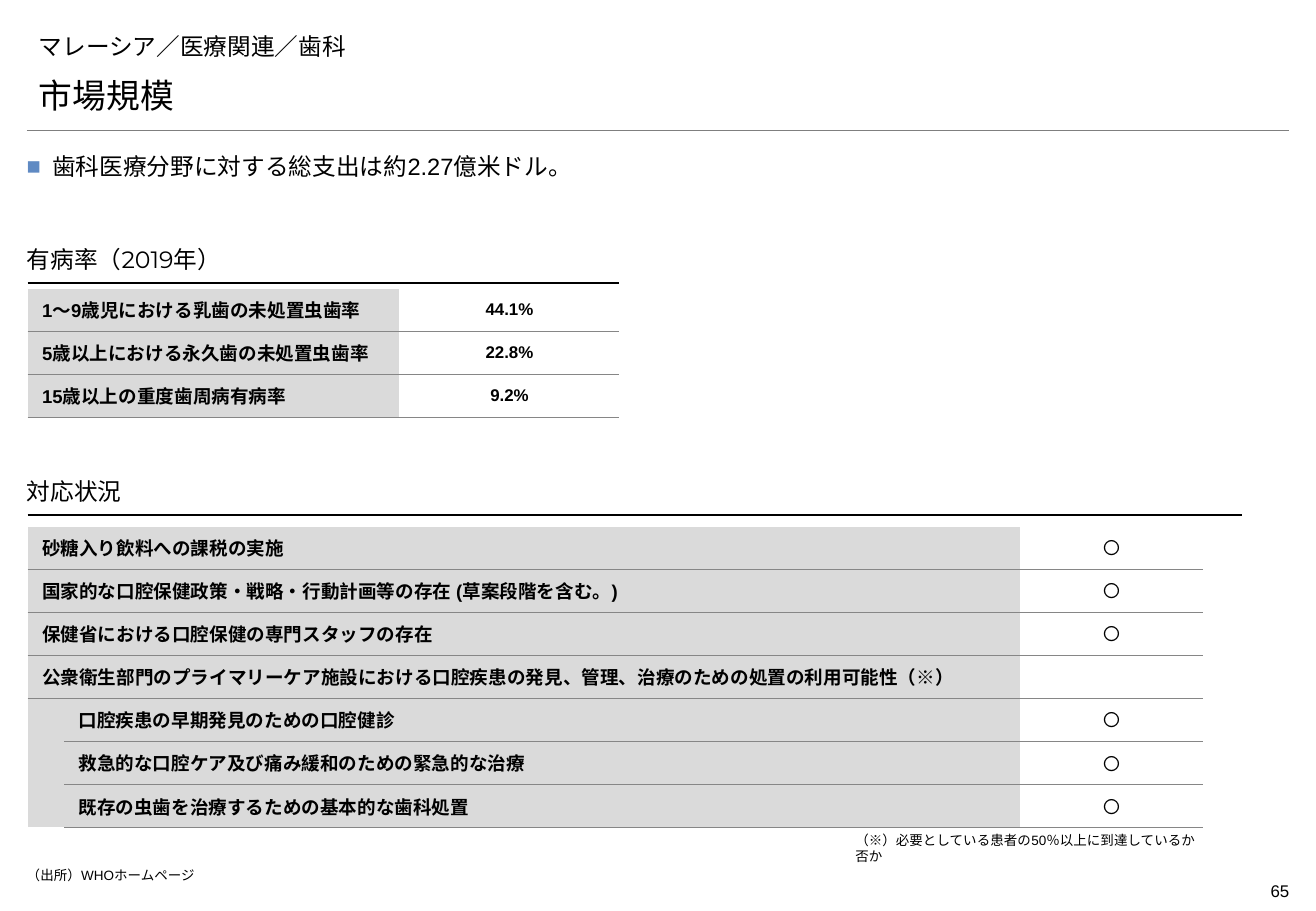
from dataclasses import dataclass
from lxml.etree import SubElement
from pptx import Presentation
from pptx.dml.color import RGBColor as Rgb
from pptx.enum.shapes import MSO_CONNECTOR as Link
from pptx.enum.text import MSO_ANCHOR as Anchor, MSO_AUTO_SIZE as Fit, PP_ALIGN as Align
from pptx.oxml.ns import qn
from pptx.util import Cm, Pt


@dataclass(frozen=True)
class Theme:
    """Hold the colours, fonts and type sizes."""
    ink: str = "000000"
    paper: str = "FFFFFF"
    label: str = "DADADA"
    rule: str = "868686"
    divide: str = "7F7F7F"
    mark: str = "5F8AC3"
    font: str = "Arial"
    head: str = "Montserrat"
    asian: str = "Noto Sans CJK JP"
    big: int = 20
    lead: int = 14
    row: int = 11
    value: int = 10
    note: int = 8
    plain: str = "{2D5ABB26-0587-4C30-8999-92F81FD0307C}"


def write(frame, text, size, color, font, asian, bold=False, align=Align.LEFT):
    """Put one formatted run of text in a frame."""
    para = frame.paragraphs[0]
    para.alignment = align
    run = para.add_run()
    run.text = text
    face = run.font
    face.size, face.bold, face.name = Pt(size), bold, font
    face.color.rgb = Rgb.from_string(color)
    SubElement(face._element, qn("a:ea"), typeface=asian)
    return para


class Page:
    """Draw elements on one slide in one style."""

    def __init__(self, slide, theme):
        """Keep the slide and its theme."""
        self.shapes = slide.shapes
        self.theme = theme

    def text(self, text, x, y, w, h, size, font=None, pad=(0, 0, 0, 0),
             anchor=Anchor.TOP, grow=False, **form):
        """Add a text box and return its paragraph."""
        frame = self.shapes.add_textbox(Cm(x), Cm(y), Cm(w), Cm(h)).text_frame
        frame.word_wrap = True
        frame.auto_size = Fit.SHAPE_TO_FIT_TEXT if grow else Fit.NONE
        frame.vertical_anchor = anchor
        (frame.margin_left, frame.margin_top,
         frame.margin_right, frame.margin_bottom) = map(Cm, pad)
        look = self.theme
        return write(frame, text, size, look.ink, font or look.font, look.asian, **form)

    def bullet(self, text, x, y, w, h):
        """Add a line of text with a square bullet."""
        para = self.text(text, x, y, w, h, self.theme.lead, grow=True, align=Align.JUSTIFY)
        para.line_spacing, para.space_after = 1.1, Pt(2)
        prop = para._p.get_or_add_pPr()
        prop.set("marL", str(Cm(0.53)))
        prop.set("indent", str(-Cm(0.53)))
        SubElement(SubElement(prop, qn("a:buClr")), qn("a:srgbClr"), val=self.theme.mark)
        SubElement(prop, qn("a:buFont"), typeface=self.theme.font)
        SubElement(prop, qn("a:buChar"), char="■")

    def line(self, x, y, end, color, width):
        """Add a level line."""
        line = self.shapes.add_connector(Link.STRAIGHT, Cm(x), Cm(y), Cm(end), Cm(y))
        line.line.color.rgb = Rgb.from_string(color)
        line.line.width = Pt(width)
        SubElement(line._element.spPr, qn("a:effectLst"))

    def head(self, text, y, end, h):
        """Add a section heading that sits on a line."""
        self.line(0.58, y, end, self.theme.ink, 0.75)
        self.text(text, 0.56, y - h, end - 0.56, h, self.theme.lead, self.theme.head,
                  pad=(0, 0.13, 0, 0.2), anchor=Anchor.BOTTOM)

    def edge(self, cell, side, color, width):
        """Rule one side of a cell."""
        line = SubElement(cell._tc.get_or_add_tcPr(), qn("a:" + side), w=str(Pt(width)))
        fill = SubElement(line, qn("a:solidFill"))
        SubElement(fill, qn("a:srgbClr"), val=color)

    def table(self, x, y, cols, rows, merges=(), gaps=()):
        """Add a ruled table with shaded labels and centred values."""
        look, high = self.theme, 0.9
        frame = self.shapes.add_table(len(rows), len(cols), Cm(x), Cm(y),
                                      Cm(sum(cols)), Cm(high * len(rows)))
        grid = frame.table
        grid.first_row = grid.horz_banding = False
        grid._tbl.tblPr.find(qn("a:tableStyleId")).text = look.plain
        for col, width in zip(grid.columns, cols):
            col.width = Cm(width)
        for start, stop in merges:
            grid.cell(*start).merge(grid.cell(*stop))
        for r, texts in enumerate(rows):
            grid.rows[r].height = Cm(high)
            for c, text in enumerate(texts):
                cell, value = grid.cell(r, c), c == len(cols) - 1
                if r == 0:
                    self.edge(cell, "lnT", look.paper, 1.5)
                elif (r - 1, c) not in gaps:
                    self.edge(cell, "lnT", look.rule, 0.5)
                if (r, c) not in gaps:
                    self.edge(cell, "lnB", look.rule, 0.5)
                cell.fill.solid()
                cell.fill.fore_color.rgb = Rgb.from_string(look.paper if value else look.label)
                cell.vertical_anchor = Anchor.MIDDLE
                cell.margin_left, cell.margin_right = Cm(0.2 if value else 0.3), Cm(0.2)
                cell.margin_top = cell.margin_bottom = 0
                if text:
                    write(cell.text_frame, text, look.value if value else look.row,
                          look.ink, look.font, look.asian, bold=text != "〇",
                          align=Align.CENTER if value else Align.LEFT)


def main():
    """Build and save the market size slide."""
    deck = Presentation()
    deck.slide_width, deck.slide_height = Cm(27.51), Cm(19.05)
    look = Theme()
    page = Page(deck.slides.add_slide(deck.slide_layouts[6]), look)
    pad = (0.25, 0.13, 0.25, 0.13)

    page.line(0.56, 2.72, 26.95, look.divide, 0.25)
    page.text("65", 24.95, 18.29, 2, 0.69, look.value, pad=(0, 0.13, 0, 0.13),
              grow=True, align=Align.RIGHT)
    page.text("マレーシア／医療関連／歯科", 0.56, 0.53, 26.39, 0.86, look.lead, look.asian,
              pad=pad, anchor=Anchor.BOTTOM, grow=True)
    page.text("市場規模", 0.56, 1.42, 26.39, 1.12, look.big, look.head,
              pad=pad, anchor=Anchor.BOTTOM, grow=True)
    page.text("（出所）WHOホームページ", 0.56, 18.14, 22.8, 0.41, look.note)
    page.bullet("歯科医療分野に対する総支出は約2.27億米ドル。", 0.56, 3.12, 26.39, 0.61)

    page.head("有病率（2019年）", 5.92, 12.93, 0.86)
    page.table(0.58, 6.02, (7.77, 4.6), (
        ("1〜9歳児における乳歯の未処置虫歯率", "44.1%"),
        ("5歳以上における永久歯の未処置虫歯率", "22.8%"),
        ("15歳以上の重度歯周病有病率", "9.2%")))

    page.head("対応状況", 10.77, 25.96, 0.66)
    page.table(0.58, 11, (0.76, 19.99, 3.81), (
        ("砂糖入り飲料への課税の実施", "", "〇"),
        ("国家的な口腔保健政策・戦略・行動計画等の存在 (草案段階を含む。)", "", "〇"),
        ("保健省における口腔保健の専門スタッフの存在", "", "〇"),
        ("公衆衛生部門のプライマリーケア施設における口腔疾患の発見、管理、治療のための処置の利用可能性（※）", "", ""),
        ("", "口腔疾患の早期発見のための口腔健診", "〇"),
        ("", "救急的な口腔ケア及び痛み緩和のための緊急的な治療", "〇"),
        ("", "既存の虫歯を治療するための基本的な歯科処置", "〇")),
        merges=[((r, 0), (r, 1)) for r in range(4)] + [((4, 0), (6, 0))],
        gaps=[(r, 0) for r in (3, 4, 5)])
    page.text("（※）必要としている患者の50％以上に到達しているか否か",
              17.88, 17.4, 7.26, 0.41, look.note)
    deck.save("out.pptx")


if __name__ == "__main__":
    main()
